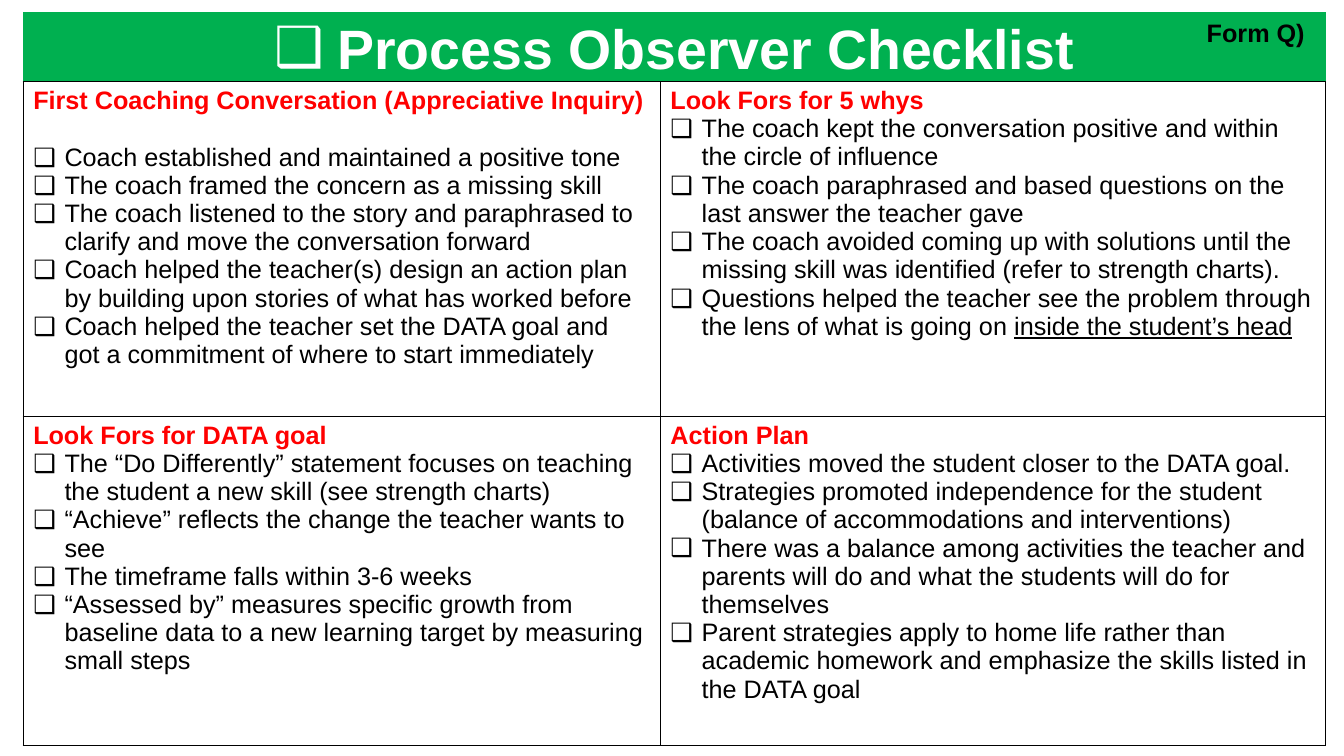
import pptx
import pptx.util
import pptx.dml.color
import pptx.enum.text
import pptx.oxml.ns
import lxml.etree

Inches = pptx.util.Inches
Pt = pptx.util.Pt
RGBColor = pptx.dml.color.RGBColor
qn = pptx.oxml.ns.qn

GREEN = RGBColor(0x00, 0xB0, 0x50)
RED = RGBColor(0xFF, 0x00, 0x00)
BLACK = RGBColor(0x00, 0x00, 0x00)
WHITE = RGBColor(0xFF, 0xFF, 0xFF)

LEFT, TOP, WIDTH = 0.23, 0.12, 12.92
TITLE_HEIGHT = 0.69
COLUMN_WIDTHS = [6.32, 6.6]
ROW_HEIGHTS = [3.32, 3.27]
UNDERLINED = "inside the student’s head"

SECTIONS = [
    [
        ("First Coaching Conversation (Appreciative Inquiry)", [
            "Coach established and maintained a positive tone",
            "The coach framed the concern as a missing skill",
            "The coach listened to the story and paraphrased to clarify and move the conversation forward",
            "Coach helped the teacher(s) design an action plan by building upon stories of what has worked before",
            "Coach helped the teacher set the DATA goal and got a commitment of where to start immediately",
        ]),
        ("Look Fors for 5 whys", [
            "The coach kept the conversation positive and within the circle of influence",
            "The coach paraphrased and based questions on the last answer the teacher gave",
            "The coach avoided coming up with solutions until the missing skill was identified (refer to strength charts).",
            "Questions helped the teacher see the problem through the lens of what is going on " + UNDERLINED,
        ]),
    ],
    [
        ("Look Fors for DATA goal", [
            "The “Do Differently” statement focuses on teaching the student a new skill (see strength charts)",
            "“Achieve” reflects the change the teacher wants to see",
            "The timeframe falls within 3-6 weeks",
            "“Assessed by” measures specific growth from baseline data to a new learning target by measuring small steps",
        ]),
        ("Action Plan", [
            "Activities moved the student closer to the DATA goal.",
            "Strategies promoted independence for the student (balance of accommodations and interventions)",
            "There was a balance among activities the teacher and parents will do and what the students will do for themselves",
            "Parent strategies apply to home life rather than academic homework and emphasize the skills listed in the DATA goal",
        ]),
    ],
]


def style(paragraph, size, color, bold):
    paragraph.font.name = "Arial"
    paragraph.font.size = Pt(size)
    paragraph.font.color.rgb = color
    paragraph.font.bold = bold


def add_checkbox(paragraph, indent):
    properties = paragraph._p.get_or_add_pPr()
    properties.set("marL", str(Inches(indent)))
    properties.set("indent", str(-Inches(indent)))
    lxml.etree.SubElement(properties, qn("a:buFont")).set("typeface", "Arial")
    lxml.etree.SubElement(properties, qn("a:buChar")).set("char", "❑")


presentation = pptx.Presentation()
presentation.slide_width = Inches(13.33)
presentation.slide_height = Inches(7.5)
slide = presentation.slides.add_slide(presentation.slide_layouts[5])

title = slide.shapes.title
title.left, title.top = Inches(LEFT), Inches(TOP)
title.width, title.height = Inches(WIDTH), Inches(TITLE_HEIGHT)
title.fill.solid()
title.fill.fore_color.rgb = GREEN
title.text_frame.text = "Process Observer Checklist"
title.text_frame.auto_size = pptx.enum.text.MSO_AUTO_SIZE.NONE
title.text_frame.vertical_anchor = pptx.enum.text.MSO_ANCHOR.MIDDLE
heading = title.text_frame.paragraphs[0]
heading.alignment = pptx.enum.text.PP_ALIGN.CENTER
add_checkbox(heading, 0.62)
style(heading, 39.6, WHITE, True)

checklist = slide.shapes.add_table(
    2, 2, Inches(LEFT), Inches(TOP + TITLE_HEIGHT), Inches(WIDTH), Inches(sum(ROW_HEIGHTS))
).table
checklist.first_row = False
checklist.horz_banding = False
for column, width in zip(checklist.columns, COLUMN_WIDTHS):
    column.width = Inches(width)

for row, height, sections in zip(checklist.rows, ROW_HEIGHTS, SECTIONS):
    row.height = Inches(height)
    for cell, (section_name, items) in zip(row.cells, sections):
        section_heading = cell.text_frame.paragraphs[0]
        section_heading.text = section_name
        style(section_heading, 18, RED, True)
        for item in items:
            entry = cell.text_frame.add_paragraph()
            add_checkbox(entry, 0.31)
            style(entry, 18, BLACK, False)
            plain, emphasis, _ = item.partition(UNDERLINED)
            entry.add_run().text = plain
            if emphasis:
                underlined = entry.add_run()
                underlined.text = emphasis
                underlined.font.underline = True

        cell_properties = cell._tc.get_or_add_tcPr()
        for side in ("a:lnL", "a:lnR", "a:lnT", "a:lnB"):
            border = lxml.etree.SubElement(cell_properties, qn(side), w=str(Pt(1)))
            border_fill = lxml.etree.SubElement(border, qn("a:solidFill"))
            lxml.etree.SubElement(border_fill, qn("a:srgbClr"), val=str(BLACK))
        cell.fill.background()

checklist.cell(0, 0).text_frame.paragraphs[0].space_after = Pt(20.2)

form_label = slide.shapes.add_textbox(Inches(11.87), Inches(TOP), Inches(1.18), Inches(0.4))
form_label.text_frame.word_wrap = False
form_label.text_frame.auto_size = pptx.enum.text.MSO_AUTO_SIZE.SHAPE_TO_FIT_TEXT
form_label.text_frame.text = "Form Q)"
style(form_label.text_frame.paragraphs[0], 18, BLACK, True)

presentation.save("out.pptx")
